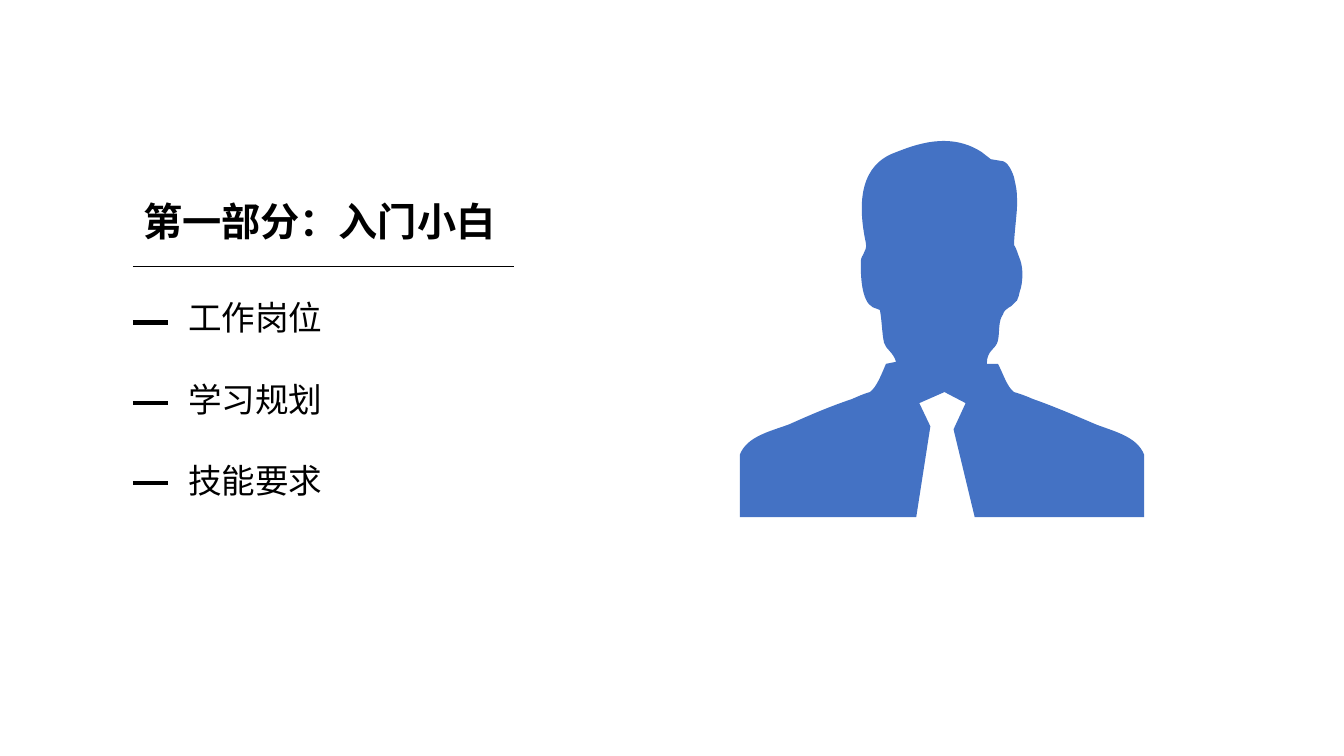
"""Build the section slide that opens part one, with its topics and a bust silhouette."""
from lxml import etree
from pptx import Presentation
from pptx.dml.color import RGBColor
from pptx.enum.shapes import MSO_CONNECTOR
from pptx.enum.text import MSO_ANCHOR, PP_ALIGN
from pptx.oxml.ns import qn
from pptx.util import Pt

STRAIGHT = MSO_CONNECTOR.STRAIGHT
TOP = MSO_ANCHOR.TOP
LEFT = PP_ALIGN.LEFT

HEADING = "第一部分：入门小白"
TOPICS = ["工作岗位", "学习规划", "技能要求"]
FONT = "Noto Sans CJK SC"
COLORS = {"ink": "000000", "bust": "4472C4"}

RULE_LEFT, RULE_RIGHT, RULE_Y = 95, 367.2, 190.4
DASH_WIDTH, DASH_Y, DASH_PITCH = 25.2, 230.4, 57.25
TOPIC_GAP = 29.5

# Pairs are corners; six numbers are two control points and an end point.
UNIT = 0.72
BUST_START = (1135, 451)
BUST_STEPS = [
    (1128, 433, 1105, 428, 1087, 421),
    (1066, 412, 1045, 403, 1025, 396),
    (1018, 393, 1013, 391, 1006, 389),
    (999, 384, 995, 370, 990, 361),
    (979, 361),
    (979, 347, 988, 347, 990, 338),
    (992, 329, 990, 319, 995, 312),
    (997, 305, 1004, 305, 1006, 301),
    (1011, 299, 1011, 289, 1013, 285),
    (1015, 275, 1015, 264, 1011, 255),
    (1009, 250, 1009, 248, 1006, 243),
    (1006, 234, 1009, 211, 1009, 204),
    (1009, 190, 1009, 190, 1006, 176),
    (1006, 176, 1002, 162, 995, 160),
    (983, 158),
    (974, 151),
    (942, 130, 907, 144, 889, 151),
    (863, 160, 847, 185, 859, 241),
    (861, 250, 852, 255, 854, 262),
    (854, 271, 854, 299, 866, 305),
    (866, 305, 875, 308, 873, 308),
    (875, 319, 875, 331, 877, 340),
    (879, 347, 886, 349, 889, 359),
    (879, 361),
    (875, 370, 870, 384, 863, 389),
    (856, 391, 852, 393, 845, 396),
    (824, 403, 803, 412, 783, 421),
    (764, 428, 741, 433, 734, 451),
    (734, 465, 734, 495, 734, 513),
    (909, 513),
    (923, 423),
    (912, 400),
    (937, 389),
    (958, 400),
    (946, 426),
    (967, 513),
    (1135, 513),
    (1135, 495, 1135, 465, 1135, 451),
]


def write(frame, lines, size, bold=False, gap=0):
    """Fill a text frame with one paragraph per line."""
    frame.word_wrap = True
    frame.vertical_anchor = TOP
    frame.margin_left = frame.margin_right = frame.margin_top = frame.margin_bottom = 0
    for index, line in enumerate(lines):
        paragraph = frame.add_paragraph() if index else frame.paragraphs[0]
        paragraph.alignment = LEFT
        paragraph.line_spacing = 1.0
        paragraph.space_before = Pt(gap if index else 0)
        run = paragraph.add_run()
        run.text = line
        run.font.name = FONT
        run.font.size = Pt(size)
        run.font.bold = bold
        run.font.color.rgb = RGBColor.from_string(COLORS["ink"])
        east_asian = etree.SubElement(run.font._element, qn("a:ea"))
        east_asian.set("typeface", FONT)


def draw_line(slide, left, right, y, weight):
    """Draw a horizontal line."""
    line = slide.shapes.add_connector(STRAIGHT, Pt(left), Pt(y), Pt(right), Pt(y))
    line.line.color.rgb = RGBColor.from_string(COLORS["ink"])
    line.line.width = Pt(weight)
    etree.SubElement(line._element.spPr, qn("a:effectLst"))


def place(x, y):
    """Turn outline units into a position on the slide."""
    return Pt(x * UNIT), Pt(y * UNIT)


def draw_bust(slide):
    """Draw the silhouette, joining each three points into one cubic curve."""
    points = []
    for step in BUST_STEPS:
        curve = step * 3 if len(step) == 2 else step
        points += [place(*curve[i:i + 2]) for i in (0, 2, 4)]
    builder = slide.shapes.build_freeform(*place(*BUST_START))
    builder.add_line_segments(points, close=True)
    bust = builder.convert_to_shape()
    segments = list(bust._element.iter(qn("a:lnTo")))
    for first, second, third in zip(segments[::3], segments[1::3], segments[2::3]):
        outline = first.getparent()
        curve = etree.Element(qn("a:cubicBezTo"))
        outline.replace(first, curve)
        for segment in (first, second, third):
            curve.append(segment[0])
        outline.remove(second)
        outline.remove(third)
    bust.shadow.inherit = False
    bust.fill.solid()
    bust.fill.fore_color.rgb = RGBColor.from_string(COLORS["bust"])
    bust.line.fill.background()


def main():
    """Build and save the slide."""
    deck = Presentation()
    deck.slide_width, deck.slide_height = Pt(960), Pt(540)
    slide = deck.slides.add_slide(deck.slide_layouts[5])

    heading = slide.shapes.title
    heading.left, heading.top, heading.width, heading.height = Pt(102.2), Pt(140.6), Pt(300), Pt(41)
    write(heading.text_frame, [HEADING], size=28, bold=True)

    topics = slide.shapes.add_textbox(Pt(134.4), Pt(212), Pt(272), Pt(164))
    write(topics.text_frame, TOPICS, size=24, gap=TOPIC_GAP)

    draw_line(slide, RULE_LEFT, RULE_RIGHT, RULE_Y, weight=0.5)
    for index in range(len(TOPICS)):
        draw_line(slide, RULE_LEFT, RULE_LEFT + DASH_WIDTH, DASH_Y + index * DASH_PITCH, weight=3)
    draw_bust(slide)
    deck.save("out.pptx")


if __name__ == "__main__":
    main()
